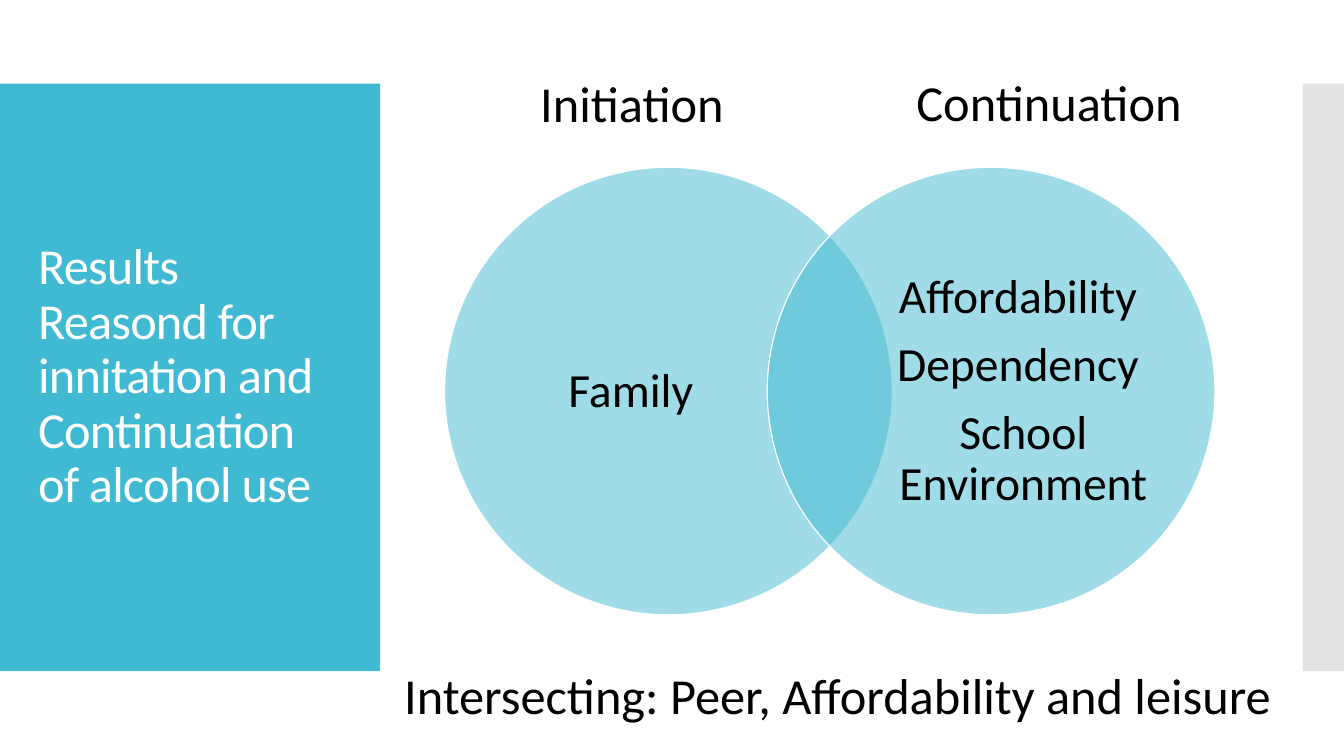
import pptx
import pptx.util
import pptx.dml.color
import pptx.enum.shapes
import pptx.enum.text
import pptx.oxml
import pptx.oxml.ns

Inches, Pt = pptx.util.Inches, pptx.util.Pt
SHAPE = pptx.enum.shapes.MSO_SHAPE
ALIGN = pptx.enum.text.PP_ALIGN
MIDDLE = pptx.enum.text.MSO_ANCHOR.MIDDLE
rgb = pptx.dml.color.RGBColor.from_string
TEAL, GREY, WHITE, BLACK = "40BAD2", "C8C8C8", "FFFFFF", "000000"


def add_filled(kind, x, y, w, h, color, opacity=100):
    s = slide.shapes.add_shape(kind, Inches(x), Inches(y), Inches(w), Inches(h))
    s.shadow.inherit = False
    s.fill.solid()
    s.fill.fore_color.rgb = rgb(color)
    s.line.fill.background()
    if opacity < 100:
        clr = s.fill._xPr.find(".//" + pptx.oxml.ns.qn("a:srgbClr"))
        clr.append(pptx.oxml.parse_xml(
            f'<a:alpha {pptx.oxml.ns.nsdecls("a")} val="{opacity * 1000}"/>'))
    return s


def add_text(x, y, w, h, lines, size, color=BLACK, wrap=True):
    tf = slide.shapes.add_textbox(Inches(x), Inches(y), Inches(w), Inches(h)).text_frame
    tf.word_wrap = wrap
    tf.text = "\n".join(lines)
    for p in tf.paragraphs:
        p.font.name = "Calibri"
        p.font.size = Pt(size)
        p.font.color.rgb = rgb(color)
    return tf


prs = pptx.Presentation()
prs.slide_width, prs.slide_height = Inches(13.33), Inches(7.5)
slide = prs.slides.add_slide(prs.slide_layouts[6])

# Side panels
add_filled(SHAPE.RECTANGLE, 0, 0.83, 3.77, 5.83, TEAL)
add_filled(SHAPE.RECTANGLE, 12.92, 0.83, 0.41, 5.83, GREY, 50)

# Title
tf = add_text(0.28, 1.23, 3.22, 5.03,
              ["Results Reasond for innitation and Continuation of alcohol use"], 36, WHITE)
tf.vertical_anchor = MIDDLE
p = tf.paragraphs[0]
p.line_spacing = 0.9
p.runs[0].font._element.set("spc", "-60")

# Venn circles, each with its reasons
venn = [
    (4.41, 5.03, ["Family "]),
    (7.61, 8.87, ["Affordability ", "Dependency ", "School Environment "]),
]
for circle_x, text_x, reasons in venn:
    s = add_filled(SHAPE.OVAL, circle_x, 1.66, 4.44, 4.44, TEAL, 50)
    s.line.color.rgb = rgb(WHITE)
    s.line.width = Pt(0.85)
    tf = add_text(text_x, 2.19, 2.56, 3.39, reasons, 34)
    tf.vertical_anchor = MIDDLE
    tf.margin_left = tf.margin_right = tf.margin_top = tf.margin_bottom = 0
    for p in tf.paragraphs:
        p.alignment = ALIGN.CENTER
        p.line_spacing = 0.9
        p.space_after = Pt(12)

# Labels around the circles
labels = [
    (5.26, 0.67, 2.13, "Initiation"),
    (8.99, 0.66, 3.03, "Continuation"),
    (3.91, 6.54, 9.14, "Intersecting: Peer, Affordability and leisure"),
]
for x, y, w, label in labels:
    add_text(x, y, w, 0.71, [label], 36, wrap=False).paragraphs[0].alignment = ALIGN.LEFT

prs.save("out.pptx")
